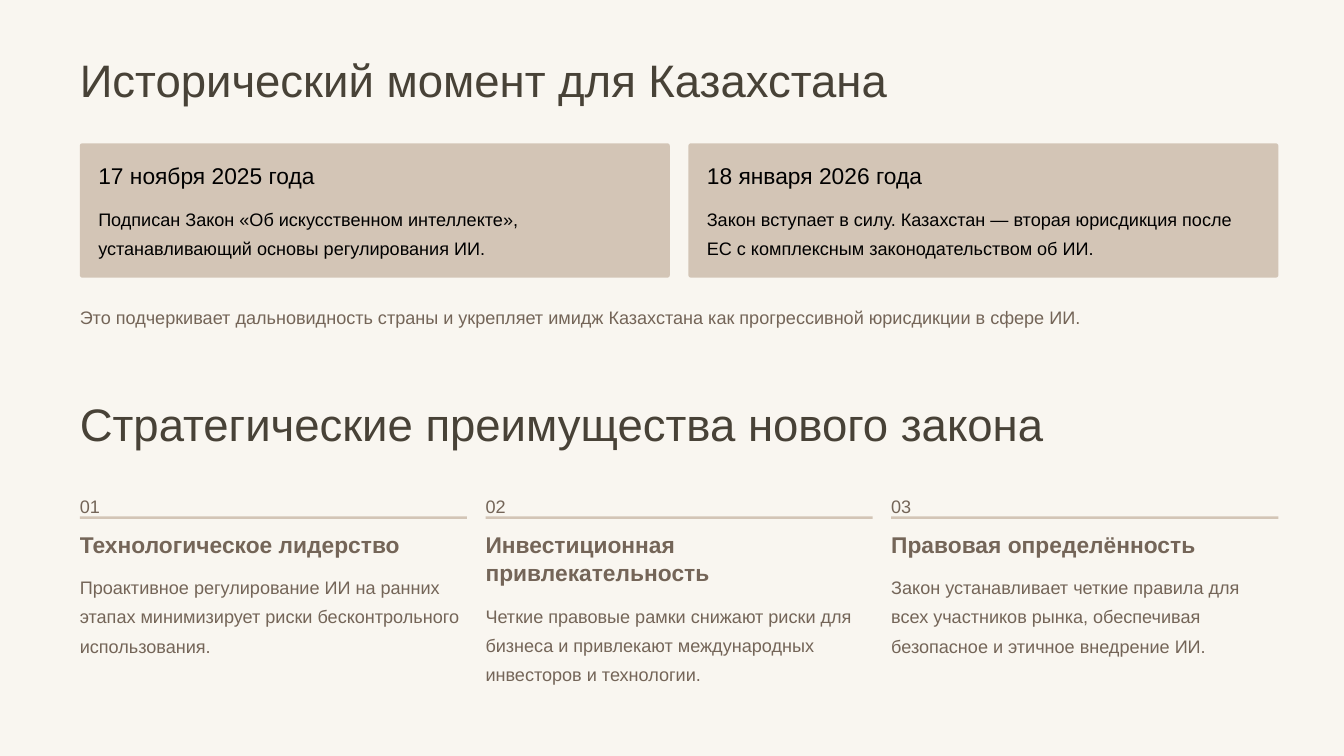
from dataclasses import dataclass

from pptx import Presentation
from pptx.dml.color import RGBColor
from pptx.enum.shapes import MSO_SHAPE
from pptx.util import Inches, Pt


@dataclass(frozen=True)
class TextStyle:
    size: float
    leading: float
    color: str
    bold: bool = False


class Theme:
    font = "Arial"
    paper = "F9F6F0"
    sand = "D3C5B6"
    title = TextStyle(39, 48.5, "484237")
    card_heading = TextStyle(19.5, 24, "000000")
    card_body = TextStyle(15.5, 25, "000000")
    heading = TextStyle(19.5, 24, "746558", True)
    body = TextStyle(15.5, 25, "746558")


class Canvas:
    """Six columns with gutters across, one hundred rows down."""

    WIDTH, HEIGHT = 16, 9
    MARGIN, CONTENT, GUTTER = 0.95, 14.27, 0.22
    COLUMNS, ROWS = 6, 100
    STEP = (CONTENT + GUTTER) / COLUMNS

    def __init__(self, slide, theme):
        self.slide, self.theme = slide, theme

    def frame(self, column, row, span, rows, inset=0):
        """Turn grid units into left, top, width and height."""
        row_height = self.HEIGHT / self.ROWS
        left = self.MARGIN + column * self.STEP + inset
        width = span * self.STEP - self.GUTTER
        return [Inches(v) for v in (left, row * row_height, width, rows * row_height)]

    def block(self, preset, frame, color):
        shape = self.slide.shapes.add_shape(preset, *frame)
        shape.shadow.inherit = False
        shape.fill.solid()
        shape.fill.fore_color.rgb = RGBColor.from_string(color)
        shape.line.fill.background()
        return shape

    def paper(self):
        whole = (0, 0, Inches(self.WIDTH), Inches(self.HEIGHT))
        self.block(MSO_SHAPE.RECTANGLE, whole, self.theme.paper)

    def card(self, column, row, span, rows):
        frame = self.frame(column, row, span, rows)
        panel = self.block(MSO_SHAPE.ROUNDED_RECTANGLE, frame, self.theme.sand)
        panel.adjustments[0] = 0.02

    def rule(self, column, row, span):
        frame = self.frame(column, row, span, 0.33)
        self.block(MSO_SHAPE.RECTANGLE, frame, self.theme.sand)

    def text(self, wording, style, column, row, span, rows, inset=0, wrap=False):
        box = self.slide.shapes.add_textbox(*self.frame(column, row, span, rows, inset))
        frame = box.text_frame
        frame.word_wrap = wrap
        frame.margin_left = frame.margin_right = 0
        frame.margin_top = frame.margin_bottom = 0
        paragraph = frame.paragraphs[0]
        paragraph.line_spacing = Pt(style.leading)
        run = paragraph.add_run()
        run.text = wording
        run.font.name = self.theme.font
        run.font.size = Pt(style.size)
        run.font.bold = style.bold
        run.font.color.rgb = RGBColor.from_string(style.color)


# Wording, with the width of each single-line heading in columns
TITLES = [
    ("Исторический момент для Казахстана", 6.56, 4.27),
    ("Стратегические преимущества нового закона", 52.11, 5.14),
]
DATES = [
    ("17 ноября 2025 года", 1.21,
     "Подписан Закон «Об искусственном интеллекте», устанавливающий основы регулирования ИИ."),
    ("18 января 2026 года", 1.22,
     "Закон вступает в силу. Казахстан — вторая юрисдикция после ЕС с комплексным "
     "законодательством об ИИ."),
]
SUMMARY = ("Это подчеркивает дальновидность страны и укрепляет имидж Казахстана "
           "как прогрессивной юрисдикции в сфере ИИ.")
# Heading, its width, its number of lines, body
ADVANTAGES = [
    ("Технологическое лидерство", 1.7, 1,
     "Проактивное регулирование ИИ на ранних этапах минимизирует риски "
     "бесконтрольного использования."),
    ("Инвестиционная привлекательность", 2, 2,
     "Четкие правовые рамки снижают риски для бизнеса и привлекают международных "
     "инвесторов и технологии."),
    ("Правовая определённость", 1.63, 1,
     "Закон устанавливает четкие правила для всех участников рынка, обеспечивая "
     "безопасное и этичное внедрение ИИ."),
]
HEADING_ROWS = 3.78


def main():
    deck = Presentation()
    deck.slide_width, deck.slide_height = Inches(Canvas.WIDTH), Inches(Canvas.HEIGHT)
    theme = Theme()
    canvas = Canvas(deck.slides.add_slide(deck.slide_layouts[6]), theme)
    canvas.paper()

    # Section titles
    for title, row, span in TITLES:
        canvas.text(title, theme.title, 0, row, span, 7.56)

    # Date cards, three columns each
    inset = Canvas.GUTTER
    body_span = 3 - 2 * inset / Canvas.STEP
    for index, (date, span, event) in enumerate(DATES):
        column = 3 * index
        canvas.card(column, 18.95, 3, 17.78)
        canvas.text(date, theme.card_heading, column, 21.33, span, HEADING_ROWS, inset)
        canvas.text(event, theme.card_body, column, 26.56, body_span, 7.67, inset, wrap=True)

    # Summary under the cards
    canvas.text(SUMMARY, theme.body, 0, 39.56, 6, 3.89)

    # Numbered advantages, two columns each
    for index, (heading, span, lines, body) in enumerate(ADVANTAGES):
        column = 2 * index
        heading_rows = HEADING_ROWS * lines
        canvas.text(f"{index + 1:02}", theme.body, column, 64.5, 0.22, 3)
        canvas.rule(column, 68.3, 2)
        canvas.text(heading, theme.heading, column, 70.11, span, heading_rows, wrap=lines > 1)
        canvas.text(body, theme.body, column, 71.5 + heading_rows, 2, 11.56, wrap=True)

    deck.save("out.pptx")


if __name__ == "__main__":
    main()
